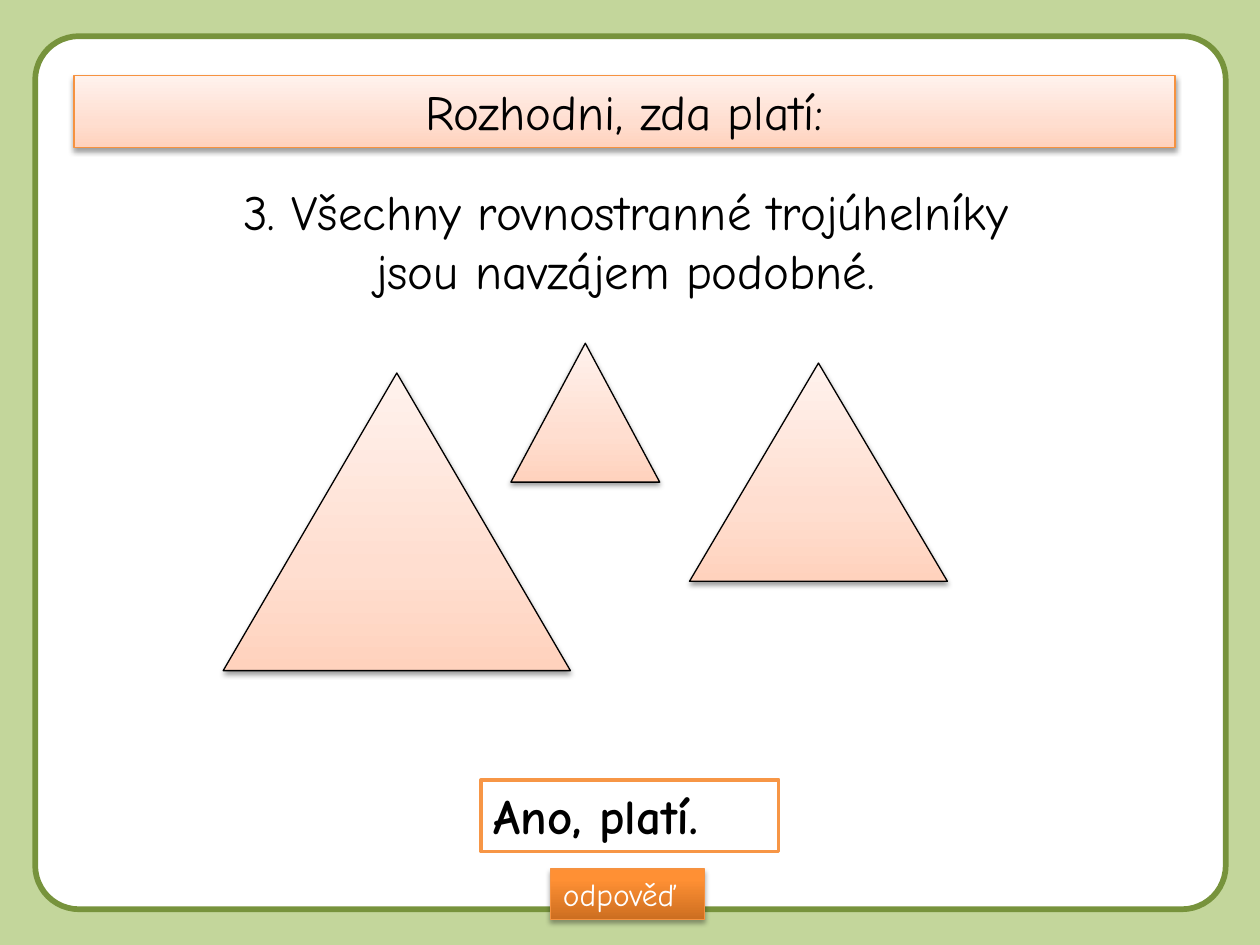
from dataclasses import dataclass

from lxml import etree
from pptx import Presentation
from pptx.dml.color import RGBColor
from pptx.enum.shapes import MSO_SHAPE
from pptx.enum.text import MSO_ANCHOR, MSO_AUTO_SIZE, PP_ALIGN
from pptx.oxml.ns import qn
from pptx.util import Cm, Pt

RECT = MSO_SHAPE.RECTANGLE
ROUND_RECT = MSO_SHAPE.ROUNDED_RECTANGLE
TRIANGLE = MSO_SHAPE.ISOSCELES_TRIANGLE
LEFT, CENTER = PP_ALIGN.LEFT, PP_ALIGN.CENTER
TOP = MSO_ANCHOR.TOP
NO_AUTOFIT = MSO_AUTO_SIZE.NONE


@dataclass(frozen=True)
class Theme:
    font: str = "Comic Neue"
    body: int = 28
    small: int = 18
    page: str = "C3D69B"
    frame: str = "77933C"
    white: str = "FFFFFF"
    black: str = "000000"
    accent: str = "F79646"
    edge: str = "F69240"
    peach: tuple = ((0, "FFD2BD"), (35, "FFDED0"), (100, "FFF2ED"))
    orange: tuple = ((0, "CC6E20"), (80, "FF9034"), (100, "FF9136"))


T = Theme()


def rgb(color):
    return RGBColor.from_string(color)


def place(s, box):
    s.left, s.top, s.width, s.height = (Cm(v) for v in box)


def add_shape(sp, kind, box):
    s = sp.add_shape(kind, *(Cm(v) for v in box))
    s.shadow.inherit = False
    return s


def set_line(s, color, width):
    s.line.color.rgb = rgb(color)
    s.line.width = Pt(width)


def set_solid(s, color):
    s.fill.solid()
    s.fill.fore_color.rgb = rgb(color)


def set_gradient(s, stops):
    s.fill.gradient()
    s.fill.gradient_angle = 90
    gs_list = s._element.spPr.find(qn("a:gradFill")).find(qn("a:gsLst"))
    for gs in list(gs_list):
        gs_list.remove(gs)
    for position, color in stops:
        gs = etree.SubElement(gs_list, qn("a:gs"), pos=str(position * 1000))
        etree.SubElement(gs, qn("a:srgbClr"), val=color)


def set_shadow(s, alpha, distance):
    s.shadow.inherit = False
    effects = s._element.spPr.find(qn("a:effectLst"))
    shadow = etree.SubElement(
        effects, qn("a:outerShdw"), blurRad=str(Pt(3.1)),
        dist=str(Pt(distance)), dir="5400000", rotWithShape="0")
    color = etree.SubElement(shadow, qn("a:srgbClr"), val=T.black)
    etree.SubElement(color, qn("a:alpha"), val=str(alpha * 1000))


def style_raised(s, stops, edge, alpha=38, distance=1.6):
    set_gradient(s, stops)
    set_line(s, edge, 0.75)
    set_shadow(s, alpha, distance)


def write(s, text, size=T.body, color=T.black, align=LEFT, bold=False, wrap=True):
    tf = s.text_frame
    tf.word_wrap = wrap
    tf.auto_size = NO_AUTOFIT
    tf.vertical_anchor = TOP
    p = tf.paragraphs[0]
    p.alignment = align
    r = p.add_run()
    r.text = text
    r.font.name = T.font
    r.font.size = Pt(size)
    r.font.bold = bold
    r.font.color.rgb = rgb(color)


def add_frame(sp):
    s = add_shape(sp, ROUND_RECT, (0.71, 0.73, 24, 17.6))
    s.adjustments[0] = 0.05
    set_solid(s, T.white)
    set_line(s, T.frame, 3.25)
    sp._spTree.insert(2, s._element)


def format_title(s):
    place(s, (1.49, 1.52, 22.2, 1.45))
    style_raised(s, T.peach, T.edge)
    write(s, "Rozhodni, zda platí:", align=CENTER)


def add_answer(sp):
    s = add_shape(sp, RECT, (9.7, 15.72, 6, 1.45))
    set_solid(s, T.white)
    set_line(s, T.accent, 2)
    write(s, "Ano, platí.", bold=True)


def add_button(sp):
    s = add_shape(sp, RECT, (11.1, 17.52, 3.1, 1.02))
    style_raised(s, T.orange, T.edge, 35, 1.8)
    write(s, "odpověď", T.small, T.white, wrap=False)


def add_statement(sp):
    s = sp.add_textbox(*(Cm(v) for v in (3.71, 3.53, 17.8, 2.65)))
    write(s, "3. Všechny rovnostranné trojúhelníky jsou navzájem podobné.",
          align=CENTER)


def add_triangle(sp, box):
    style_raised(add_shape(sp, TRIANGLE, box), T.peach, T.black)


def main():
    prs = Presentation()
    prs.slide_width, prs.slide_height = Cm(25.4), Cm(19.05)
    slide = prs.slides.add_slide(prs.slide_layouts[5])
    set_solid(slide.background, T.page)
    sp = slide.shapes
    format_title(sp.title)
    add_frame(sp)
    add_answer(sp)
    add_button(sp)
    add_statement(sp)
    for box in ((4.5, 7.52, 7, 6), (10.3, 6.92, 3, 2.8), (13.9, 7.32, 5.2, 4.4)):
        add_triangle(sp, box)
    prs.save("out.pptx")


if __name__ == "__main__":
    main()
